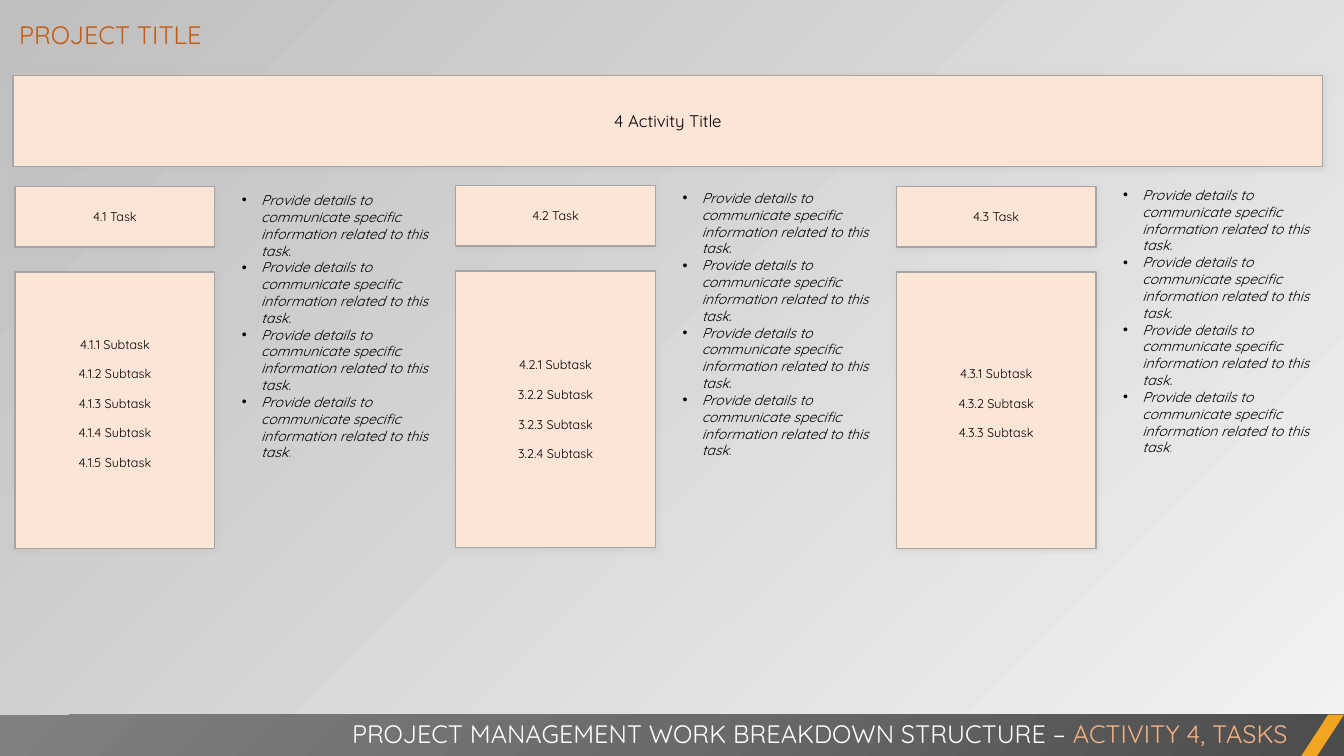
from dataclasses import dataclass

from lxml import etree
from pptx import Presentation
from pptx.dml.color import RGBColor
from pptx.enum.shapes import MSO_SHAPE
from pptx.enum.text import MSO_ANCHOR, MSO_AUTO_SIZE, PP_ALIGN
from pptx.oxml import parse_xml
from pptx.oxml.ns import nsdecls, qn
from pptx.util import Inches, Pt

RECTANGLE, PARALLELOGRAM = MSO_SHAPE.RECTANGLE, MSO_SHAPE.PARALLELOGRAM
TOP, MIDDLE = MSO_ANCHOR.TOP, MSO_ANCHOR.MIDDLE
LEFT, CENTER, RIGHT = PP_ALIGN.LEFT, PP_ALIGN.CENTER, PP_ALIGN.RIGHT
NO_FIT = MSO_AUTO_SIZE.NONE


@dataclass(frozen=True)
class Theme:
    font: str = "Quicksand"
    ink: str = "000000"
    white: str = "FFFFFF"
    card: str = "FBE5D6"
    border: str = "A5A5A5"
    shadow: str = "BFBFBF"
    title: str = "C55A11"
    accent: str = "F4B183"
    full_stop: str = "2E75B6"
    stripe: str = "F0A622"
    backdrop: tuple = ("F2F2F2", "BFBFBF")
    bar: tuple = ("4C4C4C", "6B6B6B", "808080")
    heading_size: int = 18
    activity_size: int = 12
    detail_size: int = 10
    task_size: int = 9


THEME = Theme()


def add_span(para, text, size, color, italic=False):
    span = para.add_run()
    span.text = text
    span.font.name = THEME.font
    span.font.size = Pt(size)
    span.font.bold = False
    span.font.italic = italic
    span.font.color.rgb = RGBColor.from_string(color)


def add_card(left, top, width, height, lines, size, bottom_inset=0.05):
    card = page.shapes.add_shape(
        RECTANGLE, Inches(left), Inches(top), Inches(width), Inches(height))
    card.fill.solid()
    card.fill.fore_color.rgb = RGBColor.from_string(THEME.card)
    card.line.color.rgb = RGBColor.from_string(THEME.border)
    card.line.width = Pt(1)
    card.shadow.inherit = False
    effects = card._element.spPr.find(qn("a:effectLst"))
    effects.append(parse_xml(
        f'<a:outerShdw {nsdecls("a")} blurRad="{Pt(4)}" dist="{Pt(1)}" dir="5400000">'
        f'<a:srgbClr val="{THEME.shadow}"><a:alpha val="40000"/></a:srgbClr></a:outerShdw>'))
    frame = card.text_frame
    frame.word_wrap = True
    frame.vertical_anchor = MIDDLE
    frame.margin_bottom = Inches(bottom_inset)
    for index, line in enumerate(lines):
        para = frame.add_paragraph() if index else frame.paragraphs[0]
        para.alignment = CENTER
        para.space_before = Pt(10.25 if index else 0)
        add_span(para, line, size, THEME.ink)


deck = Presentation()
deck.slide_width, deck.slide_height = Inches(13.33), Inches(7.5)
page = deck.slides.add_slide(deck.slide_layouts.get_by_name("Comparison"))

# Background
backdrop = page.background.fill
backdrop.gradient()
backdrop.gradient_angle = 135
for stop, position, color in zip(backdrop.gradient_stops, (0, 1), THEME.backdrop):
    stop.position = position
    stop.color.rgb = RGBColor.from_string(color)
first_color = page._element.find(".//" + qn("a:gs")).find(qn("a:srgbClr"))
etree.SubElement(first_color, qn("a:alpha"), val="40000")

# Project title
title = page.shapes.title
title.left, title.top = Inches(0.09), Inches(0.14)
title.width, title.height = Inches(10.11), Inches(0.4)
title.text_frame.auto_size = NO_FIT
title.text_frame.vertical_anchor = TOP
title_para = title.text_frame.paragraphs[0]
title_para.alignment = LEFT
add_span(title_para, "PROJECT TITLE", THEME.heading_size, THEME.title)

# Activity banner
add_card(0.13, 0.75, 12.99, 0.9, ["4 Activity Title"], THEME.activity_size)

# Task columns: heading, subtasks, top of the cards, top of the details, bottom inset
COLUMNS = [
    ("4.1 Task", ["4.1.1 Subtask", "4.1.2 Subtask", "4.1.3 Subtask", "4.1.4 Subtask",
                  "4.1.5 Subtask"], 1.85, 1.85, 0.19),
    ("4.2 Task", ["4.2.1 Subtask", "3.2.2 Subtask", "3.2.3 Subtask", "3.2.4 Subtask"],
     1.84, 1.83, 0.05),
    ("4.3 Task", ["4.3.1 Subtask", "4.3.2 Subtask", "4.3.3 Subtask"], 1.85, 1.8, 0.19),
]
DETAIL = "Provide details to communicate specific information related to this task"
DETAIL_COUNT = 4
COLUMN_STEP = 4.37

*detail_lists, spare = [box for box in page.placeholders if box != title]
spare._element.getparent().remove(spare._element)

for index, (column, details) in enumerate(zip(COLUMNS, detail_lists)):
    task, subtasks, card_top, detail_top, bottom_inset = column
    left = 0.15 + index * COLUMN_STEP
    add_card(left, card_top, 1.98, 0.6, [task], THEME.task_size)
    add_card(left, card_top + 0.85, 1.98, 2.74, subtasks, THEME.task_size, bottom_inset)

    details.left, details.top = Inches(left + 2.15), Inches(detail_top)
    details.width, details.height = Inches(2.06), Inches(3)
    frame = details.text_frame
    frame.auto_size = NO_FIT
    frame.vertical_anchor = TOP
    for number in range(DETAIL_COUNT):
        para = frame.add_paragraph() if number else frame.paragraphs[0]
        para.alignment = LEFT
        para.space_before = Pt(0)
        properties = para._p.get_or_add_pPr()
        properties.set("marL", str(Inches(0.19)))
        properties.set("indent", str(-Inches(0.19)))
        etree.SubElement(properties, qn("a:buFont"), typeface="Arial")
        etree.SubElement(properties, qn("a:buChar"), char="•")
        if number < DETAIL_COUNT - 1:
            add_span(para, DETAIL + ".", THEME.detail_size, THEME.ink, italic=True)
        else:
            add_span(para, DETAIL, THEME.detail_size, THEME.ink, italic=True)
            add_span(para, ".", THEME.detail_size, THEME.full_stop, italic=True)

# Footer bar with a radial gradient from the lower right corner
bar = page.shapes.add_shape(RECTANGLE, 0, Inches(7.09), deck.slide_width, Inches(0.42))
bar.line.fill.background()
bar.shadow.inherit = False
bar.fill.gradient()
gradient = bar._element.spPr.find(qn("a:gradFill"))
stops = "".join(f'<a:gs pos="{index * 50000}"><a:srgbClr val="{color}"/></a:gs>'
                for index, color in enumerate(THEME.bar))
gradient.getparent().replace(gradient, parse_xml(
    f'<a:gradFill {nsdecls("a")} rotWithShape="1"><a:gsLst>{stops}</a:gsLst>'
    '<a:path path="circle"><a:fillToRect l="100000" t="100000"/></a:path></a:gradFill>'))

# Footer stripe
stripe = page.shapes.add_shape(
    PARALLELOGRAM, Inches(12.9), Inches(7.09), Inches(0.43), Inches(0.42))
stripe.adjustments[0] = 0.65
stripe.fill.solid()
stripe.fill.fore_color.rgb = RGBColor.from_string(THEME.stripe)
stripe.line.fill.background()
stripe.shadow.inherit = False

# Footer text
footer = page.shapes.add_textbox(0, Inches(7.08), Inches(12.87), Inches(0.4))
footer.text_frame.word_wrap = True
footer_para = footer.text_frame.paragraphs[0]
footer_para.alignment = RIGHT
add_span(footer_para, "PROJECT MANAGEMENT WORK BREAKDOWN STRUCTURE – ",
         THEME.heading_size, THEME.white)
add_span(footer_para, "ACTIVITY 4, TASKS", THEME.heading_size, THEME.accent)

deck.save("out.pptx")
